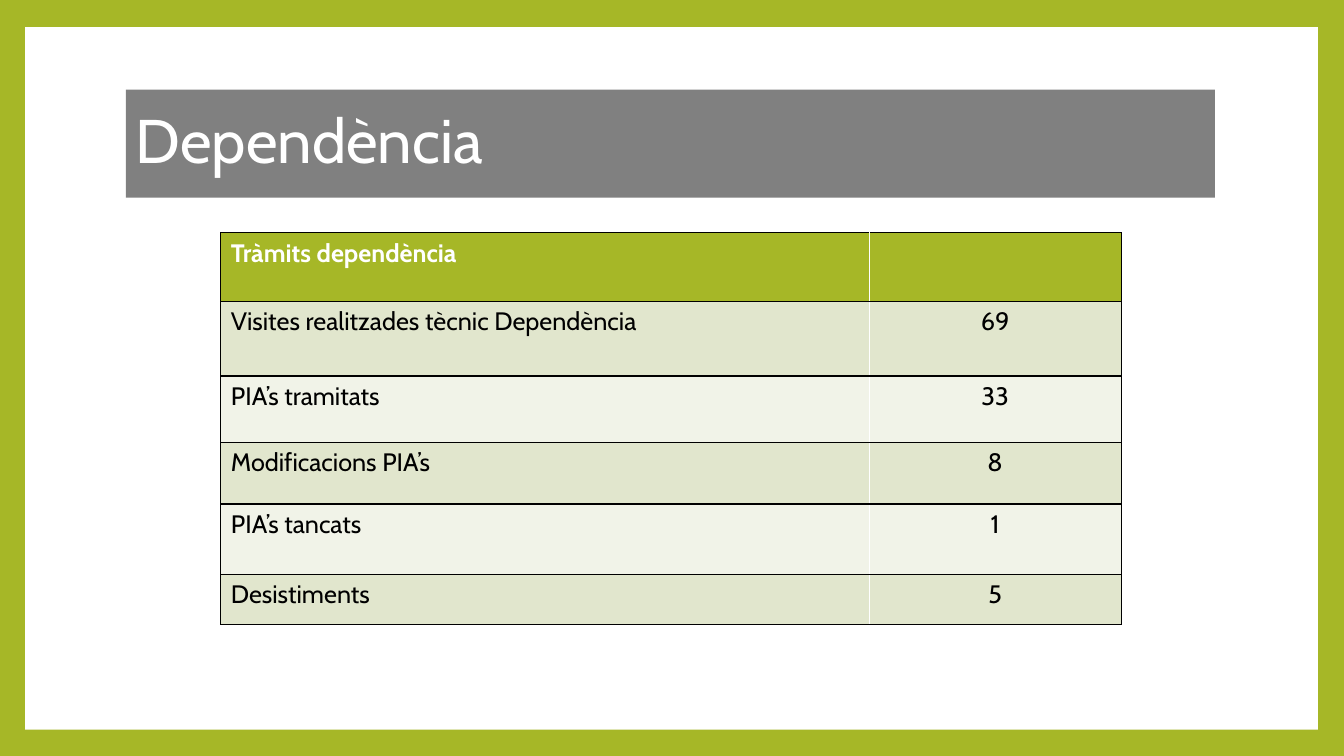
from lxml.etree import SubElement
from pptx import Presentation
from pptx.dml.color import RGBColor
from pptx.enum.shapes import MSO_SHAPE
from pptx.enum.text import MSO_ANCHOR, PP_ALIGN
from pptx.oxml.ns import qn
from pptx.util import Inches, Pt

FONT = "Cabin"
GREEN, GREY, WHITE, BLACK = "A6B727", "808080", "FFFFFF", "000000"
BANDS = ("F1F3E8", "E1E6CD")
COLUMN_WIDTHS = (6.43, 2.5)
ROWS = (
    (0.68, "Tràmits dependència", ""),
    (0.74, "Visites realitzades tècnic Dependència", "69"),
    (0.66, "PIA’s tramitats", "33"),
    (0.61, "Modificacions PIA’s", "8"),
    (0.7, "PIA’s tancats", "1"),
    (0.5, "Desistiments", "5"),
)


def paint(fill, color):
    fill.solid()
    fill.fore_color.rgb = RGBColor.from_string(color)


def style(paragraph, size, color, bold=False):
    font = paragraph.font
    for target in [font] + [run.font for run in paragraph.runs]:
        target.name = FONT
        target.size = Pt(size)
        target.bold = bold
        target.color.rgb = RGBColor.from_string(color)


def add_panel(slide, box, color):
    panel = slide.shapes.add_shape(MSO_SHAPE.RECTANGLE, *map(Inches, box))
    panel.shadow.inherit = False
    panel.line.fill.background()
    paint(panel.fill, color)
    return panel


def add_title(slide, box, title):
    banner = add_panel(slide, box, GREY)
    frame = banner.text_frame
    frame.text = title
    frame.word_wrap = True
    frame.vertical_anchor = MSO_ANCHOR.MIDDLE
    heading = frame.paragraphs[0]
    heading.alignment = PP_ALIGN.LEFT
    heading.line_spacing = 0.9
    style(heading, 44, WHITE)


def add_borders(cell, **colors):
    properties = cell._tc.get_or_add_tcPr()
    for side in "LRTB":
        line = SubElement(properties, qn(f"a:ln{side}"), w=str(Pt(1)))
        solid = SubElement(line, qn("a:solidFill"))
        SubElement(solid, qn("a:srgbClr"), val=colors.get(side, BLACK))


def add_procedures(slide, left, top):
    height = sum(row[0] for row in ROWS)
    box = (left, top, sum(COLUMN_WIDTHS), height)
    procedures = slide.shapes.add_table(
        len(ROWS), len(COLUMN_WIDTHS), *map(Inches, box)).table
    for column, width in zip(procedures.columns, COLUMN_WIDTHS):
        column.width = Inches(width)
    for r, (row_height, *entries) in enumerate(ROWS):
        procedures.rows[r].height = Inches(row_height)
        header = r == 0
        for c, entry in enumerate(entries):
            cell = procedures.cell(r, c)
            cell.text = entry
            add_borders(cell, **{"RL"[c]: WHITE})
            paint(cell.fill, GREEN if header else BANDS[r % 2])
            paragraph = cell.text_frame.paragraphs[0]
            paragraph.alignment = PP_ALIGN.CENTER if c else PP_ALIGN.LEFT
            style(paragraph, 18, WHITE if header else BLACK, header)


def main():
    deck = Presentation()
    deck.slide_width, deck.slide_height = Inches(13.33), Inches(7.5)
    slide = deck.slides.add_slide(deck.slide_layouts[6])
    paint(slide.background.fill, GREEN)
    add_panel(slide, (0.25, 0.27, 12.82, 6.97), WHITE)
    add_title(slide, (1.25, 0.89, 10.8, 1.07), "Dependència")
    add_procedures(slide, 2.19, 2.31)
    deck.save("out.pptx")


if __name__ == "__main__":
    main()
